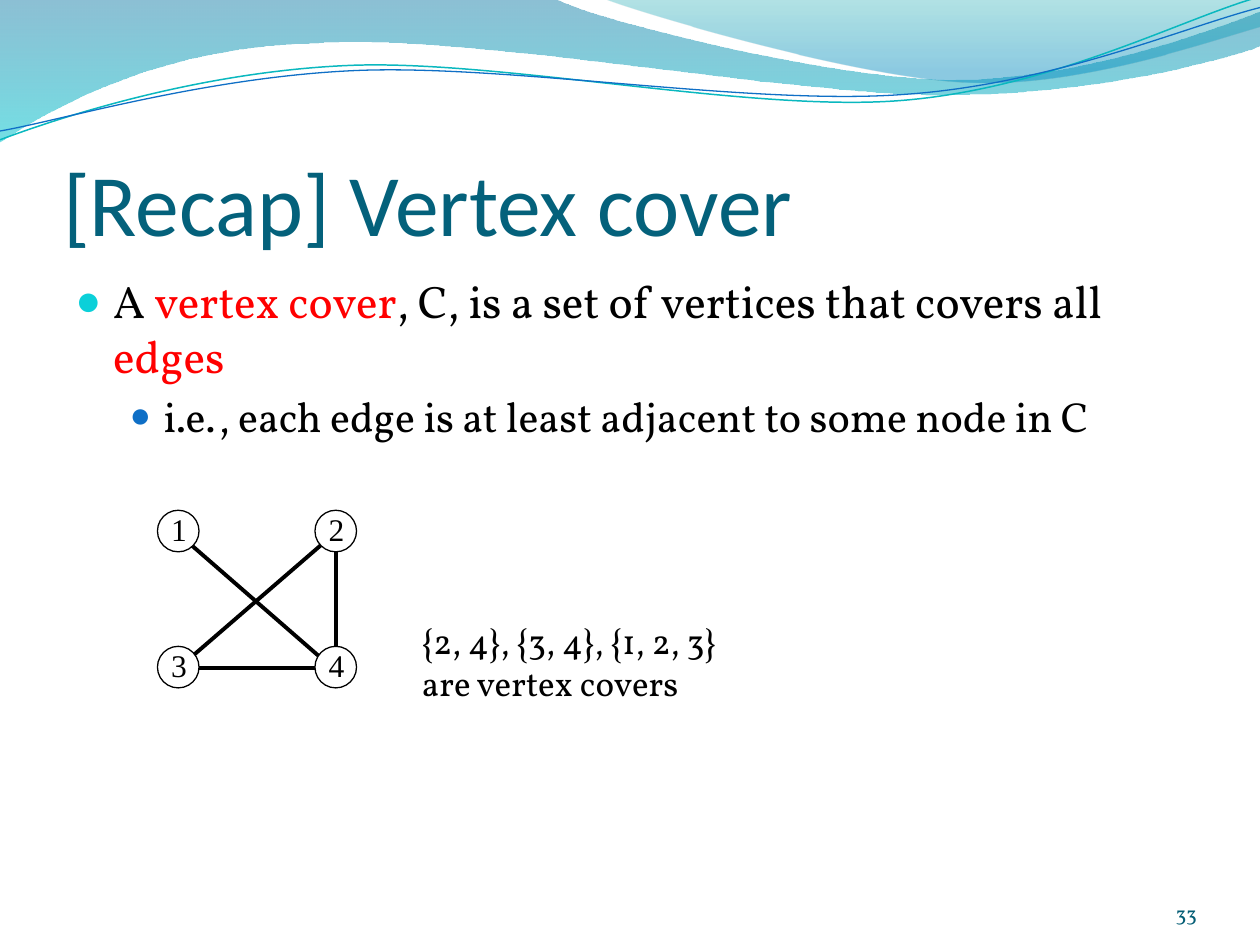
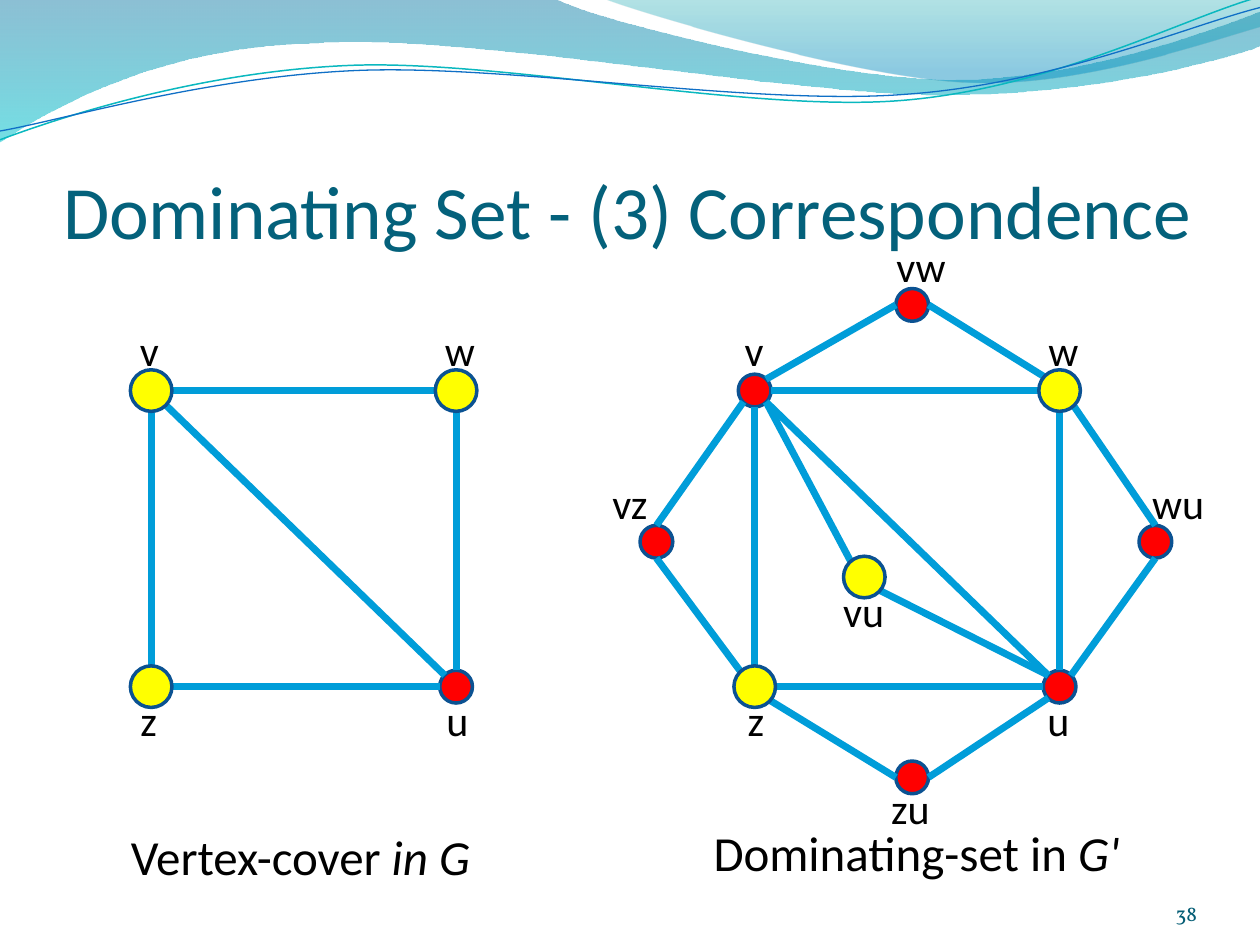
"""Two lecture slides on vertex covers and dominating sets."""
from lxml import etree
from pptx import Presentation
from pptx.dml.color import RGBColor
from pptx.enum import shapes as kinds, text as txt
from pptx.oxml.ns import qn
from pptx.util import Inches, Pt

BLACK = RGBColor(0x00, 0x00, 0x00)
WHITE = RGBColor(0xFF, 0xFF, 0xFF)
RED = RGBColor(0xFF, 0x00, 0x00)
YELLOW = RGBColor(0xFF, 0xFF, 0x00)
TITLE_TEAL = RGBColor(0x04, 0x61, 0x7B)
NUMBER_TEAL = RGBColor(0x04, 0x5D, 0x75)
EDGE_BLUE = RGBColor(0x00, 0x9D, 0xD9)
RIM_BLUE = RGBColor(0x0B, 0x52, 0x92)
WAVE_TEAL = RGBColor(0x0A, 0xB8, 0xBF)
WAVE_BLUE = RGBColor(0x0F, 0x6F, 0xC6)
BULLET_CYAN = RGBColor(0x0B, 0xD0, 0xD9)
OVAL = kinds.MSO_SHAPE.OVAL
STRAIGHT = kinds.MSO_CONNECTOR.STRAIGHT


def write(frame, *paragraphs, size=24, font="Calibri", color=BLACK, align=txt.PP_ALIGN.LEFT,
          anchor=txt.MSO_ANCHOR.TOP, margins=(0.1, 0.05, 0.1, 0.05), wrap=False):
    frame.word_wrap = wrap
    frame.auto_size = txt.MSO_AUTO_SIZE.NONE if wrap else txt.MSO_AUTO_SIZE.SHAPE_TO_FIT_TEXT
    frame.vertical_anchor = anchor
    frame.margin_left, frame.margin_top, frame.margin_right, frame.margin_bottom = map(Inches, margins)
    for index, runs in enumerate(paragraphs):
        paragraph = frame.add_paragraph() if index else frame.paragraphs[0]
        paragraph.alignment = align
        for words, own in runs:
            run = paragraph.add_run()
            run.text = words
            run.font.name = font
            run.font.size = Pt(own.get("size", size))
            run.font.color.rgb = own.get("color", color)
            run.font.italic = own.get("italic")


def paint(item, line=None, width=1, fill=None):
    if line is None:
        item.line.fill.background()
    else:
        item.line.color.rgb = line
        item.line.width = Pt(width)
    if fill is not None:
        item.fill.solid()
        item.fill.fore_color.rgb = fill
    etree.SubElement(item.element.spPr, qn("a:effectLst"))


deck = Presentation()
deck.slide_width, deck.slide_height = Inches(10), Inches(7.5)
layout = deck.slide_layouts[5]
for extra in list(layout.placeholders)[1:]:
    extra.element.getparent().remove(extra.element)

cover_slide, domination_slide = (deck.slides.add_slide(layout) for _ in range(2))

waves = [
    dict(start=(0, 0), steps=[
        [(4.4, -0.01)],
        [(4.76, 0.17), (6.64, 0.63), (7.58, 0.63)],
        [(8.53, 0.63), (9.58, 0.26), (10, 0.09)],
        [(10.01, 0.36)],
        [(9.83, 0.44), (8.7, 0.76), (7.46, 0.75)],
        [(6.22, 0.75), (3.82, 0.28), (2.57, 0.34)],
        [(1.29, 0.36), (0.46, 0.83), (-0.01, 1.13)]],
        stops=[(0, RGBColor(0x00, 0x74, 0xA1), 45), (1, RGBColor(0x00, 0xC6, 0xCF), 55)]),
    dict(start=(4.79, -0.01), steps=[
        [(5.09, 0.11), (6.82, 0.62), (7.69, 0.65)],
        [(8.56, 0.69), (9.61, 0.32), (10, 0.21)],
        [(10, 0)]],
        stops=[(0, RGBColor(0x00, 0xA1, 0xA9), 30), (0.8, RGBColor(0x00, 0x8B, 0xBF), 45)]),
    dict(start=(0, 1.11), steps=[
        [(0.48, 0.93), (1.58, 0.57), (2.77, 0.52)],
        [(3.95, 0.47), (5.93, 0.89), (7.13, 0.8)],
        [(8.33, 0.71), (9.38, 0.15), (9.98, -0.02)]], line=WAVE_TEAL, width=0.85),
    dict(start=(0, 1.04), steps=[
        [(0.47, 0.96), (1.64, 0.61), (2.83, 0.56)],
        [(4.03, 0.51), (5.97, 0.84), (7.17, 0.75)],
        [(8.36, 0.67), (9.41, 0.21), (10, 0.06)]], line=WAVE_BLUE, width=0.75),
]
for wave in waves:
    builder = cover_slide.shapes.build_freeform(*map(Inches, wave["start"]))
    builder.add_line_segments([tuple(map(Inches, point)) for step in wave["steps"] for point in step],
                              close="stops" in wave)
    band = builder.convert_to_shape()
    segments = iter(list(band.element.spPr.iter(qn("a:lnTo"))))
    for step in wave["steps"]:
        first, *others = [next(segments) for _ in step]
        if others:
            curve = etree.Element(qn("a:cubicBezTo"))
            first.addprevious(curve)
            for segment in (first, *others):
                curve.append(segment[0])
                segment.getparent().remove(segment)
    if "stops" in wave:
        band.fill.gradient()
        band.fill.gradient_angle = 270
        for stop, (position, color, _) in zip(band.fill.gradient_stops, wave["stops"]):
            stop.position = position
            stop.color.rgb = color
        for tint, (_, _, opacity) in zip(band.element.spPr.iter(qn("a:srgbClr")), wave["stops"]):
            etree.SubElement(tint, qn("a:alpha"), val=str(opacity * 1000))
    else:
        band.fill.background()
    paint(band, wave.get("line"), wave.get("width"))
    layout.shapes.element.append(band.element)

for slide, heading, size, number in [
        (cover_slide, "[Recap] Vertex cover", 50, "33"),
        (domination_slide, "Dominating Set - (3) Correspondence", 43, "38")]:
    title = slide.shapes.title
    title.left, title.top, title.width, title.height = map(Inches, (0.5, 0.77, 9, 1.25))
    write(title.text_frame, [(heading, {})], size=size, color=TITLE_TEAL,
          anchor=txt.MSO_ANCHOR.BOTTOM, margins=(0, 0.05, 0, 0), wrap=True)
    page = slide.shapes.add_textbox(*map(Inches, (8.67, 6.95, 0.83, 0.4)))
    write(page.text_frame, [(number, {})], size=12, font="Vollkorn", color=NUMBER_TEAL,
          align=txt.PP_ALIGN.RIGHT, anchor=txt.MSO_ANCHOR.BOTTOM, margins=(0, 0, 0, 0), wrap=True)

definition = cover_slide.shapes.add_textbox(*map(Inches, (0.5, 2.12, 9, 4.8))).text_frame
write(definition,
      [("A ", {}), ("vertex cover", {"color": RED}),
       (", C, is a set of vertices that covers all ", {}), ("edges", {"color": RED})],
      [("i.e., each edge is at least adjacent to some node in C", {"size": 24})],
      size=26, font="Vollkorn", wrap=True)
definition.paragraphs[1].level = 1
definition.paragraphs[1].space_before = Pt(4.8)
for paragraph, margin, hang, color, percent in zip(
        definition.paragraphs, (0.3, 0.7), (0.3, 0.27), (BULLET_CYAN, WAVE_BLUE), (95, 85)):
    props = paragraph._p.get_or_add_pPr()
    props.set("marL", str(Inches(margin)))
    props.set("indent", str(-Inches(hang)))
    bullet_color = etree.SubElement(props, qn("a:buClr"))
    etree.SubElement(bullet_color, qn("a:srgbClr"), val=str(color))
    etree.SubElement(props, qn("a:buSzPct"), val=str(percent * 1000))
    etree.SubElement(props, qn("a:buFont"), typeface="Times New Roman")
    etree.SubElement(props, qn("a:buChar"), char="●")

covers = cover_slide.shapes.add_textbox(*map(Inches, (3.25, 4.87, 2.72, 0.77)))
write(covers.text_frame, [("{2, 4}, {3, 4}, {1, 2, 3}", {})], [("are vertex covers", {})],
      size=20, font="Vollkorn")

for ends in [(2.66, 5.32, 1.42, 4.24), (2.67, 4.24, 2.67, 5.3),
             (2.74, 5.3, 1.42, 5.3), (1.42, 5.3, 2.59, 4.29)]:
    edge = cover_slide.shapes.add_connector(STRAIGHT, *map(Inches, ends))
    paint(edge, BLACK, 2.25)
for index in range(4):
    left, top = 1.25 + 1.25 * (index % 2), 4.05 + 1.08 * (index // 2)
    vertex = cover_slide.shapes.add_shape(OVAL, *map(Inches, (left, top, 0.33, 0.33)))
    paint(vertex, BLACK, 0.75, WHITE)
    digit = cover_slide.shapes.add_textbox(*map(Inches, (left + 0.01, top - 0.05, 0.33, 0.4)))
    write(digit.text_frame, [(str(index + 1), {})], size=18, font="Times New Roman")

R, D = 0.13, 0.09
rim = {"N": (0, -R), "S": (0, R), "W": (-R, 0), "E": (R, 0),
       "NW": (-D, -D), "NE": (D, -D), "SW": (-D, D), "SE": (D, D)}
square_edges = ["v E w W", "v S z N", "z E u W", "u N w S", "v SE u NW"]
added_edges = ["vw W v NE", "vw E w NW", "vz S z NW", "vz N v SW", "w SE wu N",
               "wu S u NE", "z SE zu W", "zu E u SW", "vu NW v SE", "vu SE u NW"]
cover_graph = {
    "v": (1.2, 3.1, YELLOW, 1.02, 2.53, 0.35),
    "w": (3.62, 3.1, YELLOW, 3.44, 2.53, 0.44),
    "z": (1.2, 5.45, YELLOW, 1.02, 5.46, 0.34),
    "u": (3.62, 5.45, RED, 3.45, 5.46, 0.38),
}
domination_graph = {
    "v": (5.99, 3.1, RED, 5.82, 2.53, 0.35),
    "w": (8.41, 3.1, YELLOW, 8.23, 2.53, 0.44),
    "z": (5.99, 5.45, YELLOW, 5.84, 5.46, 0.34),
    "u": (8.41, 5.45, RED, 8.22, 5.46, 0.38),
    "vz": (5.21, 4.3, RED, 4.77, 3.74, 0.48),
    "wu": (9.17, 4.3, RED, 9.05, 3.74, 0.62),
    "vw": (7.24, 2.42, RED, 7.02, 1.86, 0.6),
    "zu": (7.24, 6.17, RED, 6.98, 6.16, 0.51),
    "vu": (6.86, 4.58, YELLOW, 6.6, 4.6, 0.53),
}
for graph, edges in [(cover_graph, square_edges), (domination_graph, square_edges + added_edges)]:
    for fill, radius in [(RED, R), (YELLOW, 0.165)]:
        for x, y, color, *_ in graph.values():
            if color == fill:
                box = (x - radius, y - radius, 2 * radius, 2 * radius)
                vertex = domination_slide.shapes.add_shape(OVAL, *map(Inches, box))
                paint(vertex, RIM_BLUE, 2, fill)
        if fill == RED:
            for start, start_side, end, end_side in map(str.split, edges):
                ends = [graph[name][axis] + rim[side][axis]
                        for name, side in ((start, start_side), (end, end_side)) for axis in (0, 1)]
                edge = domination_slide.shapes.add_connector(STRAIGHT, *map(Inches, ends))
                paint(edge, EDGE_BLUE, 4)
    for name, (*_, left, top, width) in graph.items():
        label = domination_slide.shapes.add_textbox(*map(Inches, (left - 0.01, top, width, 0.51)))
        write(label.text_frame, [(name, {})], align=txt.PP_ALIGN.CENTER)

for box, words, graph_name in [((0.91, 6.51, 2.95, 0.57), "Vertex-cover ", "in G"),
                               ((5.54, 6.48, 3.47, 0.57), "Dominating-set in ", "G'")]:
    caption = domination_slide.shapes.add_textbox(*map(Inches, box))
    write(caption.text_frame, [(words, {}), (graph_name, {"italic": True})],
          size=28, align=txt.PP_ALIGN.CENTER)

deck.save("out.pptx")
